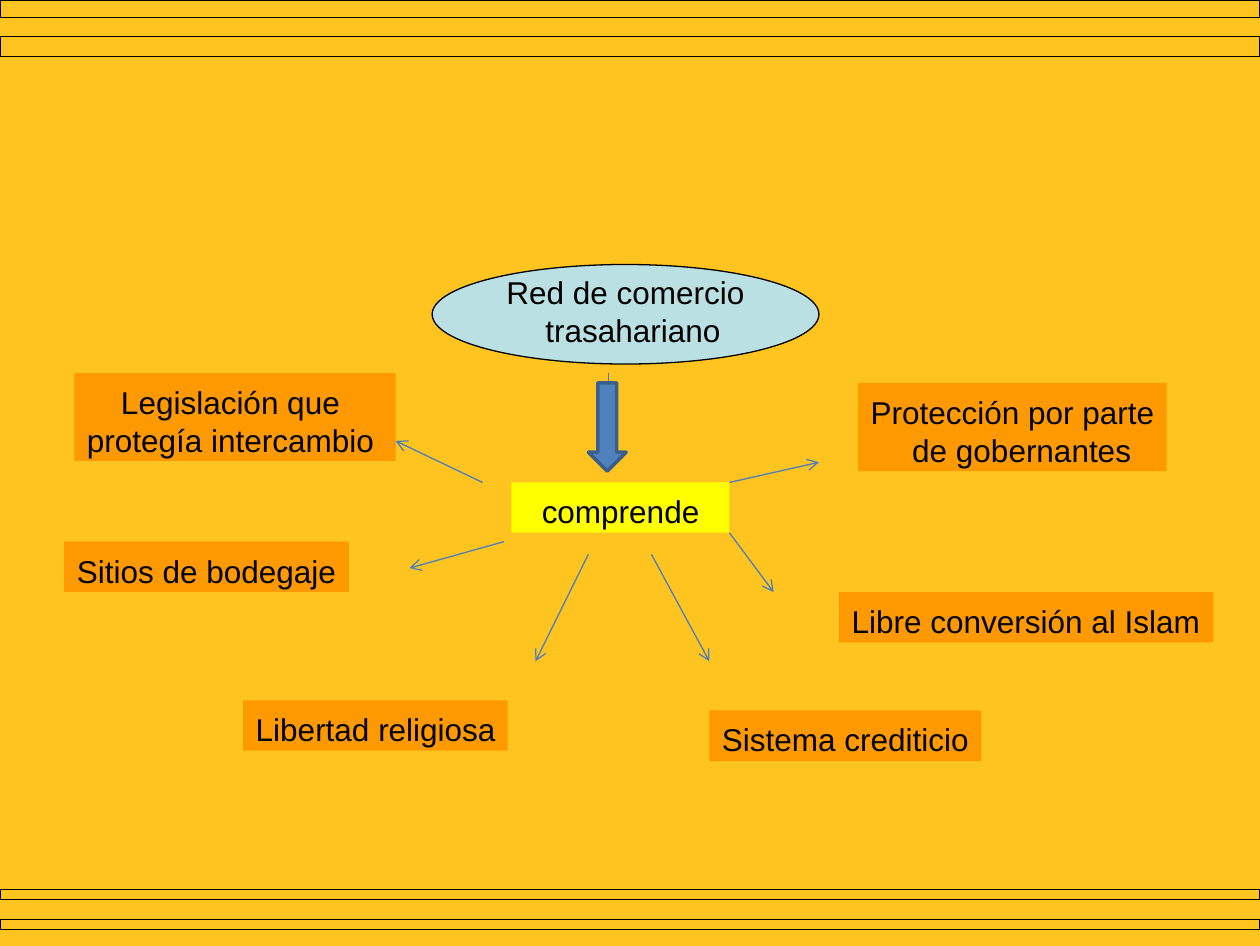
from lxml import etree
from pptx import Presentation
from pptx.dml.color import RGBColor
from pptx.enum.shapes import MSO_CONNECTOR, MSO_SHAPE
from pptx.enum.text import MSO_ANCHOR, PP_ALIGN
from pptx.oxml.ns import qn
from pptx.util import Inches, Pt

RECTANGLE = MSO_SHAPE.RECTANGLE
OVAL = MSO_SHAPE.OVAL
DOWN_ARROW = MSO_SHAPE.DOWN_ARROW
STRAIGHT = MSO_CONNECTOR.STRAIGHT
LEFT = PP_ALIGN.LEFT
TOP = MSO_ANCHOR.TOP
MIDDLE = MSO_ANCHOR.MIDDLE

BLACK = RGBColor(0x00, 0x00, 0x00)
GOLD = RGBColor(0xFF, 0xC4, 0x1F)
ORANGE = RGBColor(0xFF, 0x99, 0x00)
YELLOW = RGBColor(0xFF, 0xFF, 0x00)
PALE_BLUE = RGBColor(0xBB, 0xE0, 0xE3)
BLUE = RGBColor(0x4F, 0x81, 0xBD)
DARK_BLUE = RGBColor(0x3A, 0x5F, 0x8C)
LINE_BLUE = RGBColor(0x4B, 0x7E, 0xBC)

SLIDE_WIDTH = 10
SLIDE_HEIGHT = 7.51


class ConceptMap:
    font_name = "Arial"
    font_size = Pt(18)
    thin = Pt(0.75)

    def __init__(self, slide):
        self.slide = slide

    def background(self, color):
        fill = self.slide.background.fill
        fill.solid()
        fill.fore_color.rgb = color

    def shape(self, kind, box, fill=None, line=None, line_width=thin):
        shape = self.slide.shapes.add_shape(kind, *map(Inches, box))
        shape.shadow.inherit = False
        if fill is None:
            shape.fill.background()
        else:
            shape.fill.solid()
            shape.fill.fore_color.rgb = fill
        if line is None:
            shape.line.fill.background()
        else:
            shape.line.color.rgb = line
            shape.line.width = line_width
        return shape

    def set_text(self, shape, text, margin, indent, anchor=TOP, top=0.08, bottom=0):
        """Fill a shape with left-aligned text; lengths are in inches."""
        frame = shape.text_frame
        frame.word_wrap = True
        frame.vertical_anchor = anchor
        frame.margin_left = frame.margin_right = 0
        frame.margin_top = Inches(top)
        frame.margin_bottom = Inches(bottom)
        frame.text = text
        paragraph = frame.paragraphs[0]
        paragraph.alignment = LEFT
        properties = paragraph._p.get_or_add_pPr()
        properties.set("marL", str(Inches(margin)))
        properties.set("indent", str(Inches(indent)))
        for run in paragraph.runs:
            run.font.name = self.font_name
            run.font.size = self.font_size
            run.font.color.rgb = BLACK

    def label(self, text, box, fill, margin=0.1, indent=0):
        self.set_text(self.shape(RECTANGLE, box, fill), text, margin, indent)

    def arrow(self, start, end):
        connector = self.slide.shapes.add_connector(
            STRAIGHT, *map(Inches, start + end))
        connector.line.color.rgb = LINE_BLUE
        connector.line.width = self.thin
        line = connector.line._get_or_add_ln()
        etree.SubElement(line, qn("a:tailEnd"), type="arrow")
        etree.SubElement(connector._element.spPr, qn("a:effectLst"))


def main():
    presentation = Presentation()
    presentation.slide_width = Inches(SLIDE_WIDTH)
    presentation.slide_height = Inches(SLIDE_HEIGHT)
    blank_layout = presentation.slide_layouts[6]
    concept_map = ConceptMap(presentation.slides.add_slide(blank_layout))

    # Background and outlined bands at the top and bottom edges
    concept_map.background(GOLD)
    for top, height in ((0, 0.14), (0.29, 0.16), (7.06, 0.08), (7.3, 0.08)):
        concept_map.shape(RECTANGLE, (0, top, SLIDE_WIDTH, height), line=BLACK)

    # Features of the network: text, box, left margin, first-line indent
    features = (
        ("Sitios de bodegaje", (0.51, 4.3, 2.26, 0.4), 0.1, 0),
        ("Sistema crediticio", (5.63, 5.64, 2.16, 0.4), 0.1, 0),
        ("Protección por parte\vde gobernantes", (6.81, 3.04, 2.45, 0.7), 0.43, -0.33),
        ("Legislación que\vprotegía intercambio", (0.59, 2.96, 2.55, 0.7), 0.1, 0.27),
        ("Libertad religiosa", (1.93, 5.56, 2.1, 0.4), 0.1, 0),
        ("Libre conversión al Islam", (6.66, 4.7, 2.97, 0.4), 0.1, 0),
    )
    for text, box, margin, indent in features:
        concept_map.label(text, box, ORANGE, margin, indent)

    # Main concept and linking word
    concept = concept_map.shape(OVAL, (3.43, 2.1, 3.07, 0.79), PALE_BLUE, BLACK)
    concept_map.set_text(concept, "Red de comercio\vtrasahariano", 0.45, -0.31,
                         anchor=MIDDLE, top=0, bottom=0.05)
    concept_map.label("comprende", (4.06, 3.83, 1.73, 0.4), YELLOW, margin=0.24)

    # Link from the concept down to the linking word
    concept_map.arrow((4.83, 2.96), (4.83, 3.67))
    concept_map.shape(DOWN_ARROW, (4.67, 3.04, 0.3, 0.7), BLUE, DARK_BLUE, Pt(2))

    # Links from the linking word to the features
    links = (
        ((3.83, 3.83), (3.14, 3.5)),
        ((4, 4.3), (3.25, 4.51)),
        ((5.79, 3.83), (6.5, 3.67)),
        ((5.79, 4.23), (6.14, 4.7)),
        ((4.67, 4.4), (4.25, 5.25)),
        ((5.17, 4.4), (5.63, 5.25)),
    )
    for start, end in links:
        concept_map.arrow(start, end)

    presentation.save("out.pptx")


if __name__ == "__main__":
    main()
